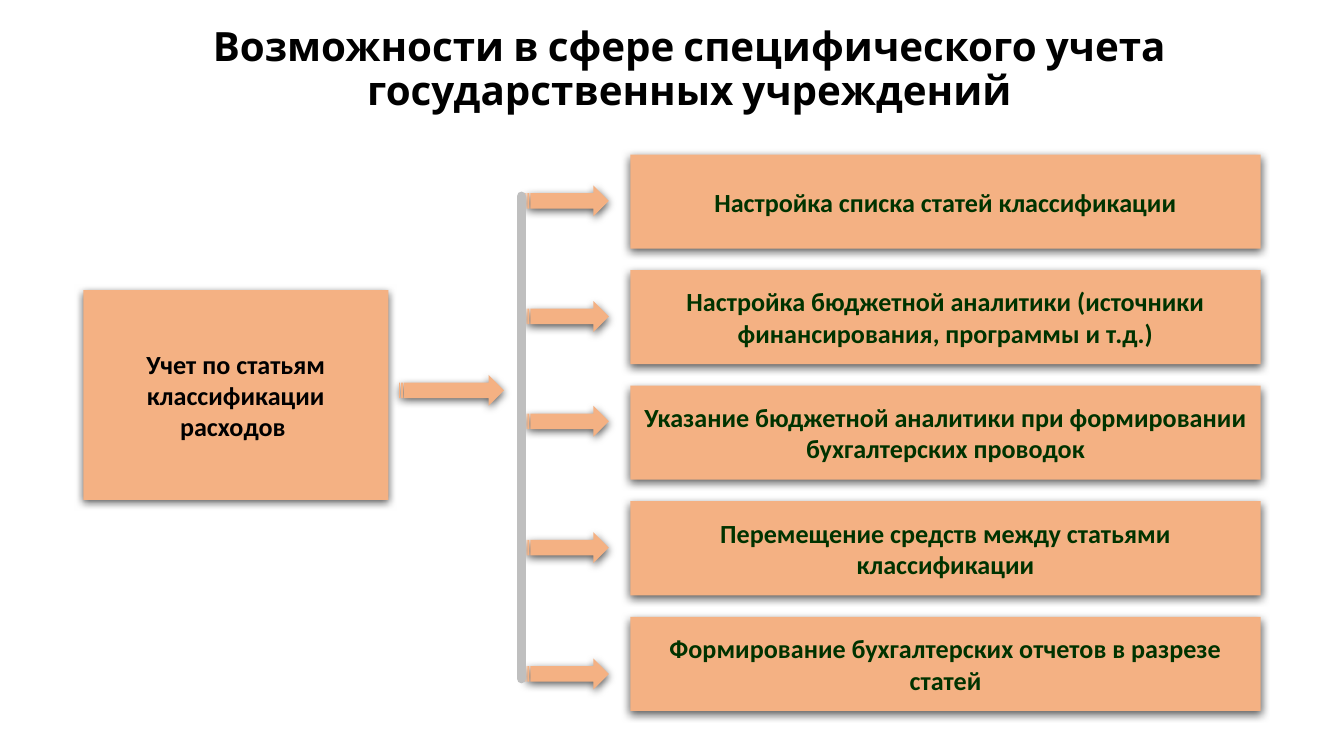
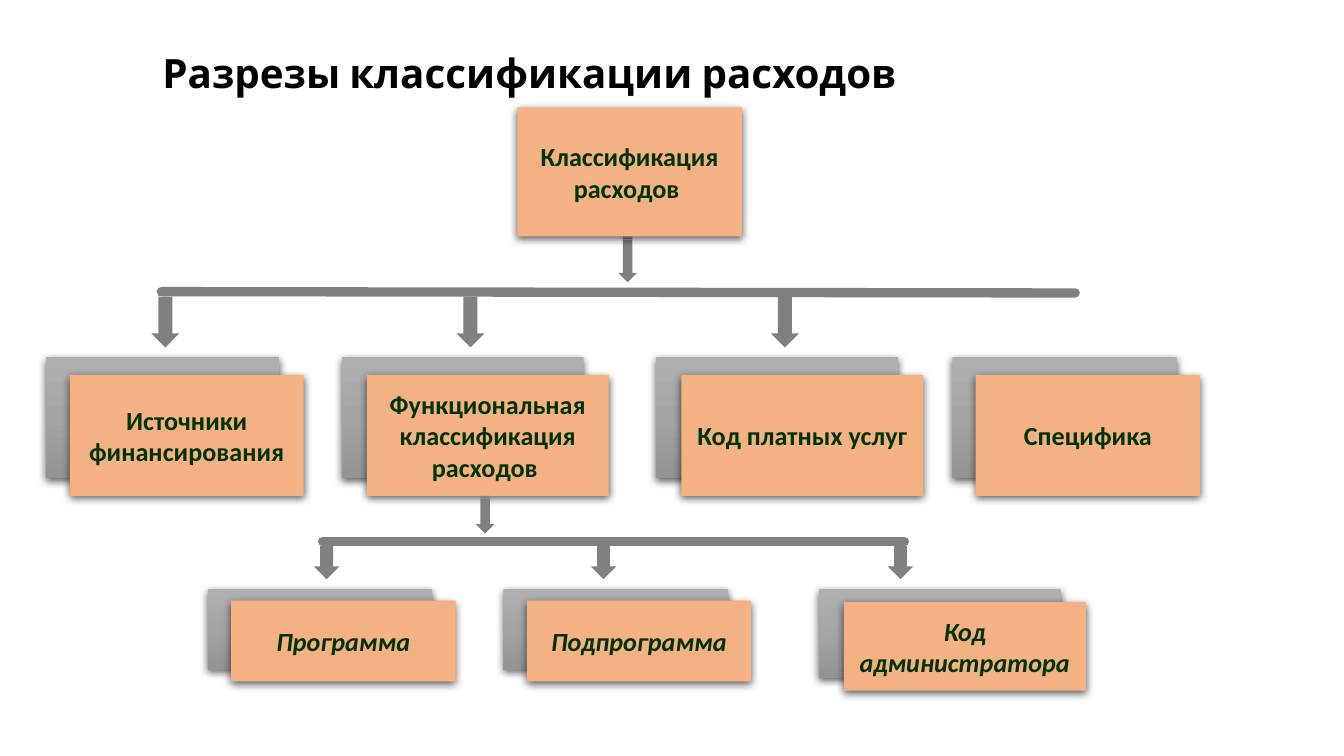
import copy
from dataclasses import dataclass

import lxml.etree
import pptx
import pptx.dml.color
import pptx.enum.shapes
import pptx.enum.text
import pptx.oxml.ns
import pptx.util

qn = pptx.oxml.ns.qn
rgb = pptx.dml.color.RGBColor.from_string
Shape = pptx.enum.shapes.MSO_SHAPE
Align = pptx.enum.text.PP_ALIGN
Anchor = pptx.enum.text.MSO_ANCHOR

WIDTH = pptx.util.Inches(10)
HEIGHT = WIDTH * 9 // 16
COLS = 100


@dataclass(frozen=True)
class Theme:
    peach: str = "F4B183"
    gray: str = "808080"
    pale: str = "BFBFBF"
    green: str = "003300"
    black: str = "000000"
    shade: tuple = ((0, "AFAFAF"), (0.5, "A5A5A5"), (1, "939393"))
    head: str = "Cabin"
    body: str = "Calibri"
    large: float = 21.6
    small: float = 14
    rail: float = 5


THEME = Theme()


def cells(*counts):
    return [round(WIDTH * n / COLS) for n in counts]


def write(par, text, font, size, color, slant=None):
    run = par.add_run()
    run.text = text
    run.font.name = font
    run.font.size = pptx.util.Pt(size)
    run.font.bold = True
    run.font.italic = slant
    run.font.color.rgb = rgb(color)


def title(slide, area, text, align):
    frame = slide.shapes.add_textbox(*cells(*area)).text_frame
    frame.word_wrap = True
    par = frame.paragraphs[0]
    par.alignment = align
    par.line_spacing = 0.9
    write(par, text, THEME.head, THEME.large, THEME.black)


def shadow(shape):
    effects = shape._element.spPr.find(qn("a:effectLst"))
    outer = lxml.etree.SubElement(
        effects, qn("a:outerShdw"), blurRad="57150", dist="19050",
        dir="5400000", algn="ctr", rotWithShape="0")
    color = lxml.etree.SubElement(outer, qn("a:srgbClr"), val=THEME.black)
    lxml.etree.SubElement(color, qn("a:alpha"), val="63000")


def block(slide, kind, area, color, shaded=True):
    shape = slide.shapes.add_shape(kind, *cells(*area))
    shape.fill.solid()
    shape.fill.fore_color.rgb = rgb(color)
    shape.line.fill.background()
    shape.shadow.inherit = False
    if shaded:
        shadow(shape)
    return shape


def box(slide, area, text, color=THEME.green, slant=None):
    shape = block(slide, Shape.RECTANGLE, area, THEME.peach)
    frame = shape.text_frame
    frame.word_wrap = True
    frame.vertical_anchor = Anchor.MIDDLE
    par = frame.paragraphs[0]
    par.alignment = Align.CENTER
    write(par, text, THEME.body, THEME.small, color, slant)


def card(slide, area, text, slant=None):
    left, top, width, height = area
    back = (left - 0.104 * width, top - 0.145 * height, width, height)
    shape = block(slide, Shape.RECTANGLE, back, THEME.gray)
    shape.fill.gradient()
    shape.fill.gradient_angle = 270
    stops = shape._element.find(".//" + qn("a:gsLst"))
    stops.insert(1, copy.deepcopy(stops[0]))
    for stop, (place, color) in zip(shape.fill.gradient_stops, THEME.shade):
        stop.position = place
        stop.color.rgb = rgb(color)
    box(slide, area, text, slant=slant)


def right(slide, left, top, length):
    block(slide, Shape.STRIPED_RIGHT_ARROW, (left, top, length, 2.3), THEME.peach)


def down(slide, mid, center, length, thick):
    area = (mid - length / 2, center - thick / 2, length, thick)
    block(slide, Shape.STRIPED_RIGHT_ARROW, area, THEME.gray, False).rotation = 90


def rail(slide, ends, color):
    line = slide.shapes.add_connector(
        pptx.enum.shapes.MSO_CONNECTOR.STRAIGHT, *cells(*ends))
    line.line.color.rgb = rgb(color)
    line.line.width = pptx.util.Pt(THEME.rail)
    line.line._get_or_add_ln().set("cap", "rnd")
    lxml.etree.SubElement(line._element.spPr, qn("a:effectLst"))


def options(slide):
    title(slide, (3.9, 1.5, 94.8, 6.8),
          "Возможности в сфере специфического учета государственных учреждений",
          Align.CENTER)
    box(slide, (6.2, 21.6, 22.7, 15.6),
        "Учет по статьям классификации расходов ", THEME.black)
    tasks = (
        ("Настройка списка статей классификации", 13.8),
        ("Настройка бюджетной аналитики (источники финансирования, программы и т.д.)", 22.4),
        ("Указание бюджетной аналитики при формировании бухгалтерских проводок", 30.2),
        ("Перемещение средств между статьями классификации", 39.6),
        ("Формирование бухгалтерских отчетов в разрезе статей", 49),
    )
    right(slide, 29.7, 27.9, 7.8)
    for row, (text, top) in enumerate(tasks):
        box(slide, (46.9, 11.5 + 8.6 * row, 46.9, 7), text)
        right(slide, 39.1, top, 6.2)
    rail(slide, (38.8, 14.6, 38.8, 50.5), THEME.pale)


def tree(slide):
    title(slide, (11.1, 3.5, 80.5, 4.7), "Разрезы классификации расходов", Align.LEFT)
    down(slide, 46.7, 19.3, 3.4, 1.4)
    for mid in (12.3, 35, 58.4):
        down(slide, mid, 23.8, 4.1, 2.1)
    rail(slide, (80, 21.8, 12, 21.7), THEME.gray)
    box(slide, (38.5, 8, 16.7, 9.6), "Классификация расходов ")
    for left, width, text in (
        (5.2, 17.4, "Источники финансирования"),
        (27.3, 18, "Функциональная классификация расходов "),
        (50.7, 18, "Код платных услуг"),
        (72.6, 16.7, "Специфика"),
    ):
        card(slide, (left, 27.9, width, 9), text)
    for left, top, width, height, mid, text in (
        (17.2, 44.7, 16.7, 6, 24.3, "Программа"),
        (39.2, 44.7, 16.7, 6, 44.9, "Подпрограмма"),
        (62.8, 44.8, 18, 6.6, 67, "Код администратора"),
    ):
        card(slide, (left, top, width, height), text, True)
        down(slide, mid, 41.7, 2.8, 1.9)
    rail(slide, (67.3, 40.3, 24, 40.3), THEME.gray)
    down(slide, 36.1, 38.3, 2.8, 1.4)


def main():
    deck = pptx.Presentation()
    deck.slide_width, deck.slide_height = WIDTH, HEIGHT
    for build in (options, tree):
        build(deck.slides.add_slide(deck.slide_layouts[6]))
    deck.save("out.pptx")


if __name__ == "__main__":
    main()
